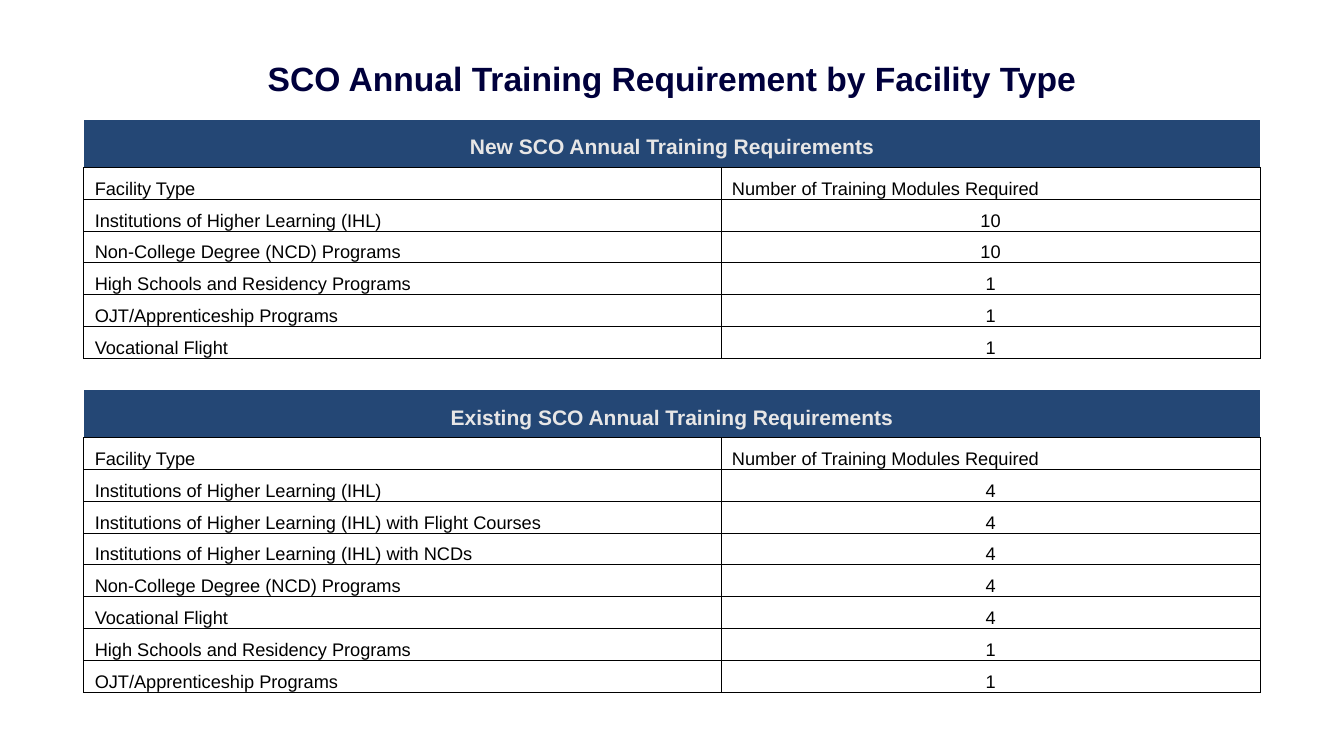
"""Build the slide on SCO annual training requirements by facility type."""
import lxml.etree
import pptx
import pptx.dml.color
import pptx.enum.text
import pptx.oxml.ns
import pptx.util

Inches = pptx.util.Inches
Align = pptx.enum.text.PP_ALIGN
Anchor = pptx.enum.text.MSO_ANCHOR


def format_text(paragraph, size, color, bold, align):
    paragraph.alignment = align
    font = paragraph.runs[0].font
    formats = {"name": "Arial", "size": pptx.util.Pt(size), "bold": bold}
    for attribute, value in formats.items():
        setattr(font, attribute, value)
    font.color.rgb = pptx.dml.color.RGBColor.from_string(color)


def set_borders(cell, drawn_sides):
    properties = cell._tc.get_or_add_tcPr()
    qn = pptx.oxml.ns.qn
    for side in "LRTB":
        line = lxml.etree.SubElement(properties, qn(f"a:ln{side}"), w="6350")
        if side in drawn_sides:
            fill = lxml.etree.SubElement(line, qn("a:solidFill"))
            lxml.etree.SubElement(fill, qn("a:srgbClr"), val="000000")
        else:
            lxml.etree.SubElement(line, qn("a:noFill"))


column_labels = ("Facility Type", "Number of Training Modules Required")
requirements = [
    ("New SCO Annual Training Requirements",),
    column_labels,
    ("Institutions of Higher Learning (IHL)", "10"),
    ("Non-College Degree (NCD) Programs", "10"),
    ("High Schools and Residency Programs", "1"),
    ("OJT/Apprenticeship Programs", "1"),
    ("Vocational Flight", "1"),
    (),
    ("Existing SCO Annual Training Requirements",),
    column_labels,
    ("Institutions of Higher Learning (IHL)", "4"),
    ("Institutions of Higher Learning (IHL) with Flight Courses", "4"),
    ("Institutions of Higher Learning (IHL) with NCDs", "4"),
    ("Non-College Degree (NCD) Programs", "4"),
    ("Vocational Flight", "4"),
    ("High Schools and Residency Programs", "1"),
    ("OJT/Apprenticeship Programs", "1"),
]
table_height = 5.68
heading_height = 0.47
row_height = (table_height - 2 * heading_height) / (len(requirements) - 2)

presentation = pptx.Presentation()
presentation.slide_width = Inches(13.33)
presentation.slide_height = Inches(7.5)
slide = presentation.slides.add_slide(presentation.slide_layouts[5])

title = slide.shapes.title
title_place = {"left": 0.6, "top": 0.62, "width": 12.13, "height": 0.35}
for attribute, value in title_place.items():
    setattr(title, attribute, Inches(value))
title.text_frame.text = "SCO Annual Training Requirement by Facility Type"
title.text_frame.auto_size = pptx.enum.text.MSO_AUTO_SIZE.NONE
title.text_frame.vertical_anchor = Anchor.MIDDLE
title.text_frame.paragraphs[0].line_spacing = 0.9
format_text(title.text_frame.paragraphs[0], 24, "00003C", True, Align.CENTER)

training = slide.shapes.add_table(
    len(requirements), 2, Inches(0.83), Inches(1.19), Inches(11.67), Inches(table_height)
).table
training.first_row = False
training.horz_banding = False
for column, width in zip(training.columns, (6.32, 5.35)):
    column.width = Inches(width)

for row_index, texts in enumerate(requirements):
    is_heading = len(texts) == 1
    training.rows[row_index].height = Inches(heading_height if is_heading else row_height)
    side_margin, end_margin = (0.16, 0.08) if is_heading else (0.01, 0)
    drawn_sides = "B" if is_heading else "LRTB" if texts else "T"
    if is_heading:
        training.cell(row_index, 0).merge(training.cell(row_index, 1))
    for column_index in range(2):
        cell = training.cell(row_index, column_index)
        cell_format = {
            "margin_left": Inches(side_margin),
            "margin_right": Inches(side_margin),
            "margin_top": Inches(end_margin or 0.01),
            "margin_bottom": Inches(end_margin),
            "vertical_anchor": Anchor.BOTTOM,
        }
        for attribute, value in cell_format.items():
            setattr(cell, attribute, value)
        set_borders(cell, drawn_sides)
        if is_heading:
            cell.fill.solid()
            cell.fill.fore_color.rgb = pptx.dml.color.RGBColor.from_string("244775")
        else:
            cell.fill.background()
    for column_index, text in enumerate(texts):
        cell = training.cell(row_index, column_index)
        cell.text = text
        paragraph = cell.text_frame.paragraphs[0]
        if is_heading:
            format_text(paragraph, 15, "E7E6E6", True, Align.CENTER)
        elif text.isdigit():
            format_text(paragraph, 13, "000000", False, Align.CENTER)
        else:
            format_text(paragraph, 13, "000000", False, Align.LEFT)
            paragraph._p.get_or_add_pPr().set("marL", str(Inches(0.1)))

presentation.save("out.pptx")
